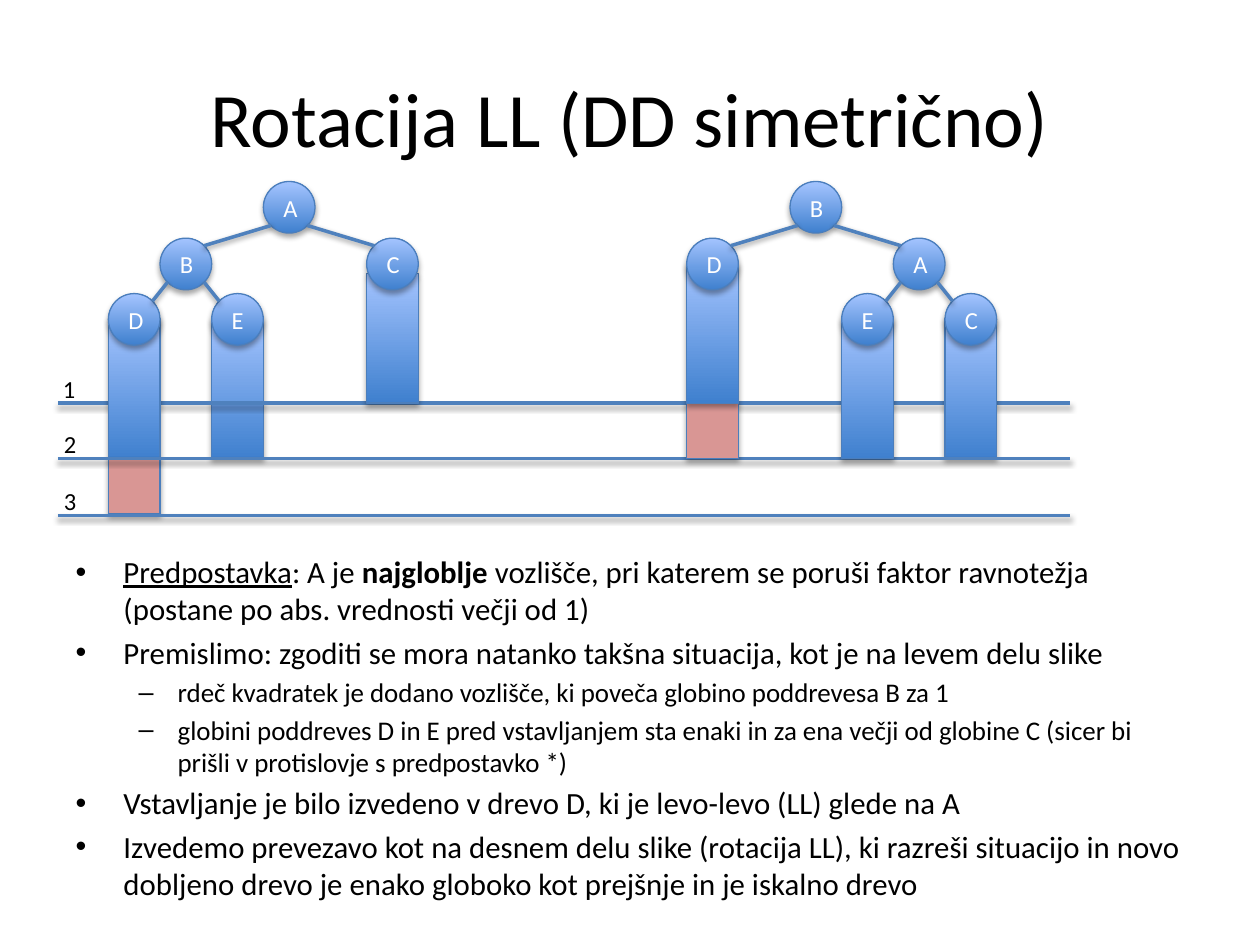
"""Builds the slide that explains the LL rotation of a search tree."""
from lxml import etree
from pptx import Presentation
from pptx.dml.color import RGBColor
from pptx.enum.shapes import MSO_CONNECTOR, MSO_SHAPE
from pptx.enum.text import MSO_ANCHOR, MSO_AUTO_SIZE, PP_ALIGN
from pptx.oxml.ns import qn
from pptx.util import Inches, Pt

RECT, OVAL = MSO_SHAPE.RECTANGLE, MSO_SHAPE.OVAL
LINE = MSO_CONNECTOR.STRAIGHT
CENTER, MIDDLE = PP_ALIGN.CENTER, MSO_ANCHOR.MIDDLE
FIXED = MSO_AUTO_SIZE.NONE
HEX = {"dark": "3F80CE", "light": "A4C4FF", "edge": "4B7EBC", "line": "4F81BD",
       "red": "D99694", "black": "000000", "white": "FFFFFF"}
RGB = {name: RGBColor.from_string(code) for name, code in HEX.items()}
SIZE, HALF = 0.41, 0.2
ROWS = [1.44, 1.89, 2.33]
LEFT, RIGHT = 0.86, 5.45

deck = Presentation()
deck.slide_width, deck.slide_height = Inches(10), Inches(7.5)
slide = deck.slides.add_slide(deck.slide_layouts[1])
shapes = slide.shapes


def write(para, text, size, color, bold=None, under=None):
    run = para.add_run()
    run.text = text
    font = run.font
    font.name, font.size, font.color.rgb = "Calibri", Pt(size), RGB[color]
    font.bold, font.underline = bold, under


def style(item, color, width, dist, alpha):
    item.line.color.rgb, item.line.width = RGB[color], Pt(width)
    props = item._element.spPr
    list_ = etree.SubElement(props, qn("a:effectLst"))
    cast = etree.SubElement(list_, qn("a:outerShdw"), blurRad="40000", dist=str(dist),
                            dir="5400000", rotWithShape="0")
    tint = etree.SubElement(cast, qn("a:srgbClr"), val=HEX["black"])
    etree.SubElement(tint, qn("a:alpha"), val=str(alpha * 1000))


title = shapes.title
title.left, title.top, title.width, title.height = map(Inches, (0.5, 0.3, 9, 1.25))
title.text_frame.vertical_anchor = MIDDLE
head = title.text_frame.paragraphs[0]
head.alignment = CENTER
write(head, "Rotacija LL (DD simetrično)", 44, "black")

points = [
    (0, [("Predpostavka", None, True), (": A je ", None, None), ("najgloblje ", True, None),
         ("vozlišče, pri katerem se poruši faktor ravnotežja "
          "(postane po abs. vrednosti večji od 1)", None, None)]),
    (0, [("Premislimo: zgoditi se mora natanko takšna situacija, "
          "kot je na levem delu slike", None, None)]),
    (1, [("rdeč kvadratek je dodano vozlišče, ki poveča globino poddrevesa B za 1", None, None)]),
    (1, [("globini poddreves D in E pred vstavljanjem sta enaki in za ena večji od globine C "
          "(sicer bi prišli v protislovje s predpostavko *)", None, None)]),
    (0, [("Vstavljanje je bilo izvedeno v drevo D, ki je levo-levo (LL) glede na A", None, None)]),
    (0, [("Izvedemo prevezavo kot na desnem delu slike (rotacija LL), ki razreši situacijo in "
          "novo dobljeno drevo je enako globoko kot prejšnje in je iskalno drevo", None, None)]),
]
body = slide.placeholders[1]
body.left, body.top, body.width, body.height = map(Inches, (0.5, 4.34, 9, 3.16))
frame = body.text_frame
frame.auto_size = FIXED
for num, (level, runs) in enumerate(points):
    para = frame.add_paragraph() if num else frame.paragraphs[0]
    para.level = level
    props = para._p.get_or_add_pPr()
    props.set("marL", str(Inches((0.38, 0.81)[level])))
    props.set("indent", str(Inches((-0.38, -0.31)[level])))
    for text, bold, under in runs:
        write(para, text, (17.6, 15.4)[level], "black", bold, under)

layers = [
    ("bar", LEFT, 2, 2.53, 3.64),
    ("rule", 3.2),
    ("bar", LEFT, 0, 2.53, 3.64),
    ("red", LEFT, 0, 3.64, 4.08),
    ("bar", RIGHT, 5, 2.53, 3.64),
    ("rule", 3.64),
    ("rule", 4.09),
    ("bar", LEFT, 5, 2.17, 3.2),
    ("bar", RIGHT, 3, 2.53, 3.64),
    ("red", RIGHT, 0, 3.2, 3.64),
    ("bar", RIGHT, 0, 2.09, 3.2),
]
trees = [
    (LEFT, {"A": (3, 0), "B": (1, 1), "C": (5, 1), "D": (0, 2), "E": (2, 2)},
     ["AB", "AC", "BD", "BE"]),
    (RIGHT, {"B": (2, 0), "D": (0, 1), "A": (4, 1), "E": (3, 2), "C": (5, 2)},
     ["BD", "BA", "AE", "AC"]),
]
blocks = []
for kind, *spot in layers:
    if kind == "rule":
        rule = shapes.add_connector(LINE, *map(Inches, (0.46, spot[0], 8.49, spot[0])))
        style(rule, "line", 2, 20000, 38)
    else:
        base, col, top, end = spot
        blocks.append((RECT, kind, base + SIZE * col, top, end - top, ""))
        shape_args = blocks[-1]
        bar = shapes.add_shape(RECT, *map(Inches, (base + SIZE * col, top, SIZE, end - top)))
        if kind == "red":
            bar.fill.solid()
            bar.fill.fore_color.rgb = RGB["red"]
        else:
            bar.fill.gradient()
            bar.fill.gradient_angle = 90
            for stop, name in zip(bar.fill.gradient_stops, ("dark", "light")):
                stop.color.rgb = RGB[name]
        style(bar, "edge", 0.75, 23000, 35)

for base, nodes, edges in trees:
    for name, (col, row) in nodes.items():
        node = shapes.add_shape(OVAL, *map(Inches, (base + SIZE * col, ROWS[row], SIZE, SIZE)))
        node.fill.gradient()
        node.fill.gradient_angle = 90
        for stop, tone in zip(node.fill.gradient_stops, ("dark", "light")):
            stop.color.rgb = RGB[tone]
        style(node, "edge", 0.75, 23000, 35)
        node.text_frame.vertical_anchor = MIDDLE
        para = node.text_frame.paragraphs[0]
        para.alignment = CENTER
        write(para, name, 14, "white")
    for start, end in edges:
        (col, row), (goal, down) = nodes[start], nodes[end]
        near, far = (0.06, 0.35) if goal < col else (0.35, 0.06)
        edge = shapes.add_connector(LINE, *map(Inches, (
            base + SIZE * col + near, ROWS[row] + 0.35,
            base + SIZE * goal + far, ROWS[down] + 0.06)))
        style(edge, "line", 2, 20000, 38)

for text, left, top in [("1", 0.4, 2.92), ("2", 0.41, 3.36), ("3", 0.41, 3.81)]:
    label = shapes.add_textbox(*map(Inches, (left, top, 0.3, 0.34)))
    label.text_frame.word_wrap = False
    write(label.text_frame.paragraphs[0], text, 14, "black")

deck.save("out.pptx")
